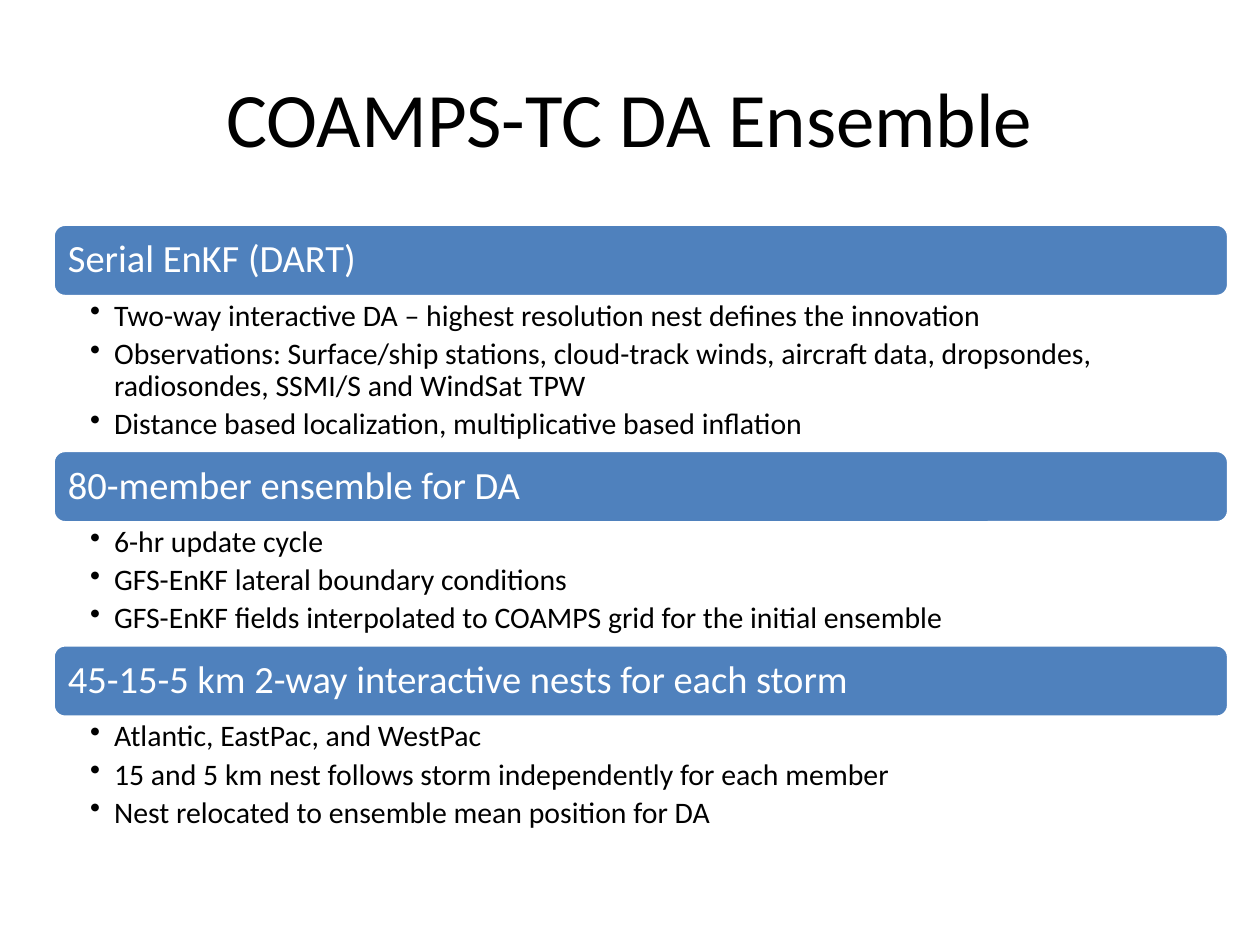
import pptx
import pptx.dml.color
import pptx.enum.shapes
import pptx.enum.text
import pptx.oxml
import pptx.oxml.ns
import pptx.util
from pptx.util import Cm

ALIGN = pptx.enum.text.PP_ALIGN
ANCHOR = pptx.enum.text.MSO_ANCHOR

SECTIONS = [
    ("Serial EnKF (DART)", 3.1, [
        "Two-way interactive DA – highest resolution nest defines the innovation",
        "Observations: Surface/ship stations, cloud-track winds, aircraft data, "
        "dropsondes, radiosondes, SSMI/S and WindSat TPW",
        "Distance based localization, multiplicative based inflation",
    ]),
    ("80-member ensemble for DA", 2.46, [
        "6-hr update cycle",
        "GFS-EnKF lateral boundary conditions",
        "GFS-EnKF fields interpolated to COAMPS grid for the initial ensemble",
    ]),
    ("45-15-5 km 2-way interactive nests for each storm", 2.46, [
        "Atlantic, EastPac, and WestPac",
        "15 and 5 km nest follows storm independently for each member",
        "Nest relocated to ensemble mean position for DA",
    ]),
]
HEADING_HEIGHT = 1.46


def color(hex_code):
    """Return the colour for a hex string."""
    return pptx.dml.color.RGBColor.from_string(hex_code)


def add_bullet(paragraph, indent):
    """Give a paragraph a hanging bullet."""
    properties = paragraph._p.get_or_add_pPr()
    properties.set("marL", str(Cm(indent)))
    properties.set("indent", str(-Cm(indent)))
    namespace = pptx.oxml.ns.nsdecls("a")
    properties.append(pptx.oxml.parse_xml(f'<a:buChar {namespace} char="•"/>'))


def write(shape, text, size, fill="000000", align=ALIGN.LEFT, anchor=ANCHOR.TOP,
          insets=(0.25, 0.13, 0.25, 0.13), spacing=1.0, after=0, bullet_indent=None):
    """Write each line of text as a paragraph in the shape."""
    frame = shape.text_frame
    frame.word_wrap = True
    frame.vertical_anchor = anchor
    frame.margin_left, frame.margin_top, frame.margin_right, frame.margin_bottom = map(Cm, insets)
    frame.text = text
    for paragraph in frame.paragraphs:
        if bullet_indent:
            add_bullet(paragraph, bullet_indent)
        paragraph.alignment = align
        paragraph.line_spacing = spacing
        paragraph.space_after = pptx.util.Pt(after)
        paragraph.font.name = "Calibri"
        paragraph.font.size = pptx.util.Pt(size)
        paragraph.font.color.rgb = color(fill)


def add_title(slide, left, top, width, height):
    """Place the centred slide title."""
    title = slide.shapes.add_textbox(Cm(left), Cm(top), Cm(width), Cm(height))
    write(title, "COAMPS-TC DA Ensemble", 44, align=ALIGN.CENTER, anchor=ANCHOR.MIDDLE)


def add_section(slide, left, top, width, height, topic, details):
    """Place a heading bar with its bulleted details below."""
    heading = slide.shapes.add_shape(
        pptx.enum.shapes.MSO_SHAPE.ROUNDED_RECTANGLE,
        Cm(left), Cm(top), Cm(width), Cm(HEADING_HEIGHT))
    heading.shadow.inherit = False
    heading.fill.solid()
    heading.fill.fore_color.rgb = color("4F81BD")
    heading.line.color.rgb = color("FFFFFF")
    heading.line.width = pptx.util.Pt(2)
    write(heading, topic, 22, fill="FFFFFF", anchor=ANCHOR.MIDDLE,
          insets=(0.23,) * 4, spacing=0.9)
    body = slide.shapes.add_textbox(
        Cm(left), Cm(top + HEADING_HEIGHT), Cm(width), Cm(height - HEADING_HEIGHT))
    write(body, "\n".join(details), 17, insets=(0.75, 0.08, 0.43, 0.08),
          spacing=0.9, after=3.4, bullet_indent=0.48)


def main():
    """Build and save the slide."""
    deck = pptx.Presentation()
    deck.slide_width, deck.slide_height = Cm(25.4), Cm(19.05)
    slide = deck.slides.add_slide(deck.slide_layouts[6])
    add_title(slide, 1.27, 0.76, 22.86, 3.18)
    top = 4.52
    for topic, body_height, details in SECTIONS:
        height = HEADING_HEIGHT + body_height
        add_section(slide, 1.07, top, 23.7, height, topic, details)
        top += height
    deck.save("out.pptx")


if __name__ == "__main__":
    main()
